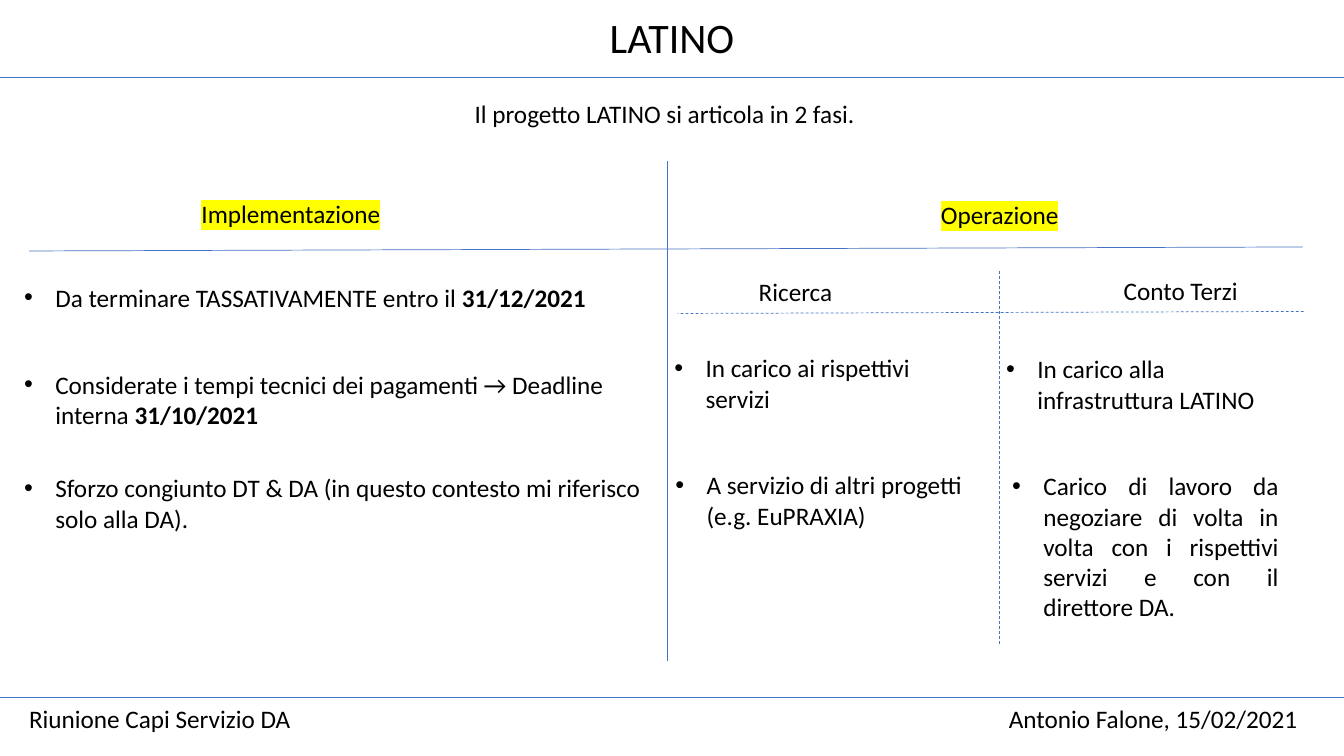
from lxml import etree
from pptx import Presentation
from pptx.dml.color import RGBColor
from pptx.enum.dml import MSO_LINE
from pptx.enum.shapes import MSO_CONNECTOR
from pptx.enum.text import MSO_ANCHOR, MSO_AUTO_SIZE, PP_ALIGN
from pptx.oxml.ns import qn
from pptx.util import Inches, Pt

STRAIGHT = MSO_CONNECTOR.STRAIGHT
DASH = MSO_LINE.DASH
TOP = MSO_ANCHOR.TOP
FIT, NO_FIT = MSO_AUTO_SIZE.SHAPE_TO_FIT_TEXT, MSO_AUTO_SIZE.NONE
LEFT, CENTER, JUSTIFY = PP_ALIGN.LEFT, PP_ALIGN.CENTER, PP_ALIGN.JUSTIFY

COLORS = {"text": "000000", "line": "4472C4", "highlight": "FFFF00"}
FONT = "Calibri"
WIDTH, HEIGHT = 13.33, 7.5
INDENT = 0.31
ROW, TWO_ROWS, FIVE_ROWS = 0.4, 0.71, 1.62  # text box heights


def add_run(p, text, size=18, bold=None, highlight=False):
    r = p.add_run()
    r.text = text
    r.font.size = Pt(size)
    r.font.bold = bold
    r.font.color.rgb = RGBColor.from_string(COLORS["text"])
    if highlight:
        mark = etree.SubElement(r.font._element, qn("a:highlight"))
        etree.SubElement(mark, qn("a:srgbClr"), val=COLORS["highlight"])
    r.font.name = FONT


def add_text(s, x, y, w, h, align=LEFT):
    """Add an empty text box and return its first paragraph."""
    tf = s.shapes.add_textbox(Inches(x), Inches(y), Inches(w), Inches(h)).text_frame
    tf.word_wrap = True
    tf.auto_size = FIT
    p = tf.paragraphs[0]
    p.alignment = align
    return p


def add_label(s, x, y, w, text, highlight=False):
    add_run(add_text(s, x, y, w, ROW, CENTER), text, highlight=highlight)


def add_bullet(s, x, y, w, h, text, date=None, align=LEFT):
    p = add_text(s, x, y, w, h, align)
    pPr = p._p.get_or_add_pPr()
    pPr.set("marL", str(Inches(INDENT)))
    pPr.set("indent", str(-Inches(INDENT)))
    etree.SubElement(pPr, qn("a:buFont"), typeface="Arial")
    etree.SubElement(pPr, qn("a:buChar"), char="•")
    add_run(p, text)
    if date:
        add_run(p, date, bold=True)


def add_line(s, x1, y1, x2, y2, dashed=False):
    line = s.shapes.add_connector(STRAIGHT, Inches(x1), Inches(y1), Inches(x2), Inches(y2))
    line.line.color.rgb = RGBColor.from_string(COLORS["line"])
    line.line.width = Pt(0.5)
    if dashed:
        line.line.dash_style = DASH
    etree.SubElement(line._element.spPr, qn("a:effectLst"))


def header(s, x, y, w):
    title = s.shapes.title
    title.left, title.top = Inches(x + 5.24), Inches(y + 0.06)
    title.width, title.height = Inches(2.85), Inches(0.61)
    tf = title.text_frame
    tf.vertical_anchor = TOP
    tf.auto_size = NO_FIT
    p = tf.paragraphs[0]
    p.alignment = CENTER
    add_run(p, "LATINO", size=30)
    add_line(s, x, y + 0.77, x + w, y + 0.77)
    add_label(s, x + 3.38, y + 0.93, 6.48, "Il progetto LATINO si articola in 2 fasi. ")


def dividers(s, x, y, w, h):
    """Split the body into two phases, with a rule under their headings."""
    add_line(s, x + 6.33, y, x + 6.33, y + h)
    add_line(s, x + w, y + 0.85, x, y + 0.89)


def implementation(s, x, y, w):
    add_label(s, x + 1.32, y + 0.32, 2.85, "Implementazione", highlight=True)
    add_bullet(s, x, y + 1.15, w - 0.25, ROW,
               "Da terminare TASSATIVAMENTE entro il ", "31/12/2021")
    add_bullet(s, x, y + 2.01, w, TWO_ROWS,
               "Considerate i tempi tecnici dei pagamenti → Deadline interna ", "31/10/2021")
    add_bullet(s, x, y + 3.04, w, TWO_ROWS,
               "Sforzo congiunto DT & DA (in questo contesto mi riferisco solo alla DA).")


def operation(s, x, y, w):
    add_label(s, x + 1.9, y + 0.33, 2.85, "Operazione", highlight=True)
    # Dashed grid of the two columns
    add_line(s, x + w, y + 1.49, x + 0.13, y + 1.51, dashed=True)
    add_line(s, x + 3.32, y + 4.79, x + 3.32, y + 1.08, dashed=True)
    # Research
    add_label(s, x + 0.35, y + 1.09, 1.9, "Ricerca")
    add_bullet(s, x, y + 1.85, 3.17, TWO_ROWS, "In carico ai rispettivi servizi")
    add_bullet(s, x + 0.01, y + 3.01, 3.17, TWO_ROWS,
               "A servizio di altri progetti (e.g. EuPRAXIA)")
    # Third parties
    add_label(s, x + 4.17, y + 1.08, 1.9, "Conto Terzi")
    add_bullet(s, x + 3.29, y + 1.86, 3.17, TWO_ROWS, "In carico alla infrastruttura LATINO")
    add_bullet(s, x + 3.35, y + 3.02, 2.84, FIVE_ROWS,
               "Carico di lavoro da negoziare di volta in volta con i rispettivi "
               "servizi e con il direttore DA.", align=JUSTIFY)


def footer(s, x, y, w):
    add_line(s, x, y, x + w, y)
    p = add_text(s, x + 0.19, y + 0.01, 12.86, ROW)
    tabs = etree.SubElement(p._p.get_or_add_pPr(), qn("a:tabLst"))
    etree.SubElement(tabs, qn("a:tab"), pos=str(Inches(12.58)), algn="r")
    add_run(p, "Riunione Capi Servizio DA\tAntonio Falone, 15/02/2021")


def main():
    prs = Presentation()
    prs.slide_width, prs.slide_height = Inches(WIDTH), Inches(HEIGHT)
    s = prs.slides.add_slide(prs.slide_layouts.get_by_name("Title Only"))
    header(s, 0, 0, WIDTH)
    dividers(s, 0.29, 1.6, 12.63, 4.96)
    implementation(s, 0.14, 1.6, 6.33)
    operation(s, 6.59, 1.6, 6.34)
    footer(s, 0, 6.92, WIDTH)
    prs.save("out.pptx")


if __name__ == "__main__":
    main()
